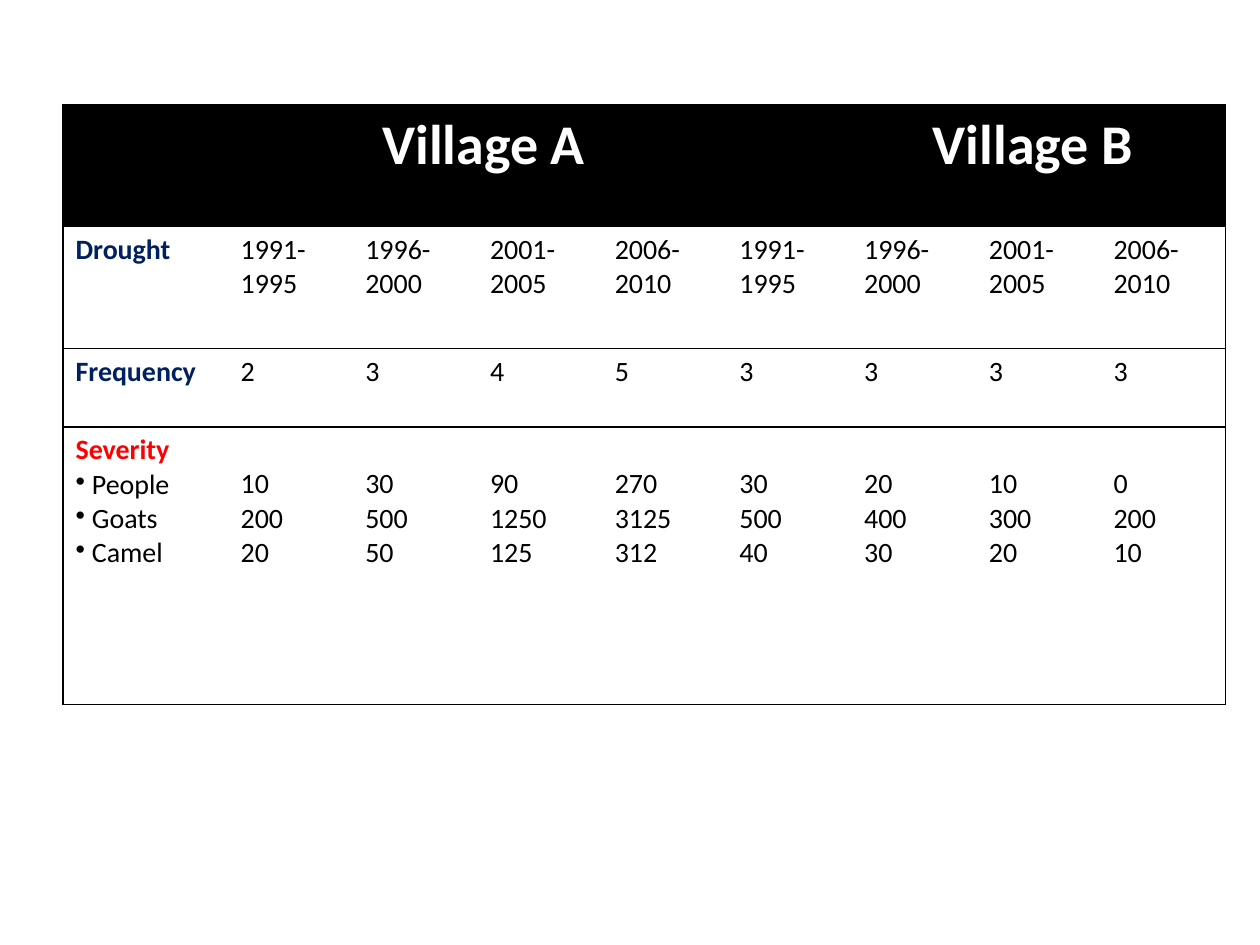
from dataclasses import dataclass
from lxml.etree import SubElement
from pptx import Presentation
from pptx.dml.color import RGBColor
from pptx.enum.text import PP_ALIGN
from pptx.oxml.ns import qn
from pptx.util import Inches, Pt


@dataclass(frozen=True)
class Theme:
    font: str = "Calibri"
    black: str = "000000"
    white: str = "FFFFFF"
    navy: str = "002060"
    red: str = "FF0000"
    heading_size: int = 32
    body_size: int = 16
    border_width: float = 0.75


theme = Theme()


def write_line(cell, text, first=True, size=theme.body_size, color=theme.black,
               bold=False, align=PP_ALIGN.LEFT, bullet=False):
    para = cell.text_frame.paragraphs[0] if first else cell.text_frame.add_paragraph()
    para.alignment = align
    if bullet:
        properties = para._p.get_or_add_pPr()
        properties.set("marL", str(Inches(0.13)))
        properties.set("indent", str(-Inches(0.13)))
        SubElement(properties, qn("a:buChar"), char="•")
    span = para.add_run()
    span.text = text
    span.font.name = theme.font
    span.font.size = Pt(size)
    span.font.bold = bold
    span.font.color.rgb = RGBColor.from_string(color)


def set_borders(cell, visible_sides):
    properties = cell._tc.get_or_add_tcPr()
    for side in "LRTB":
        line = SubElement(properties, qn(f"a:ln{side}"), w=str(Pt(theme.border_width)))
        if side in visible_sides:
            fill = SubElement(line, qn("a:solidFill"))
            SubElement(fill, qn("a:srgbClr"), val=theme.black)
        else:
            SubElement(line, qn("a:noFill"))


periods = ["1991-1995", "1996-2000", "2001-2005", "2006-2010"] * 2
frequencies = [2, 3, 4, 5, 3, 3, 3, 3]
severity = {
    "People": [10, 30, 90, 270, 30, 20, 10, 0],
    "Goats": [200, 500, 1250, 3125, 500, 400, 300, 200],
    "Camel": [20, 50, 125, 312, 40, 30, 20, 10],
}
column_widths = [1.31] + [0.99] * 8
row_heights = [0.97, 0.97, 0.62, 2.2]

deck = Presentation()
deck.slide_width = Inches(10)
deck.slide_height = Inches(7.5)
page = deck.slides.add_slide(deck.slide_layouts[6])

table = page.shapes.add_table(
    len(row_heights), len(column_widths), Inches(0.5), Inches(0.83),
    Inches(sum(column_widths)), Inches(sum(row_heights))).table
table.first_row = False
table.horz_banding = False
for column, width in zip(table.columns, column_widths):
    column.width = Inches(width)
for row, height in zip(table.rows, row_heights):
    row.height = Inches(height)

last_column = len(column_widths) - 1
for row_index, row in enumerate(table.rows):
    for column_index, cell in enumerate(row.cells):
        sides = "TB"
        if column_index == 0:
            sides += "L"
        if column_index == last_column:
            sides += "R"
        set_borders(cell, sides)
        if row_index == 0:
            cell.fill.solid()
            cell.fill.fore_color.rgb = RGBColor.from_string(theme.black)
        else:
            cell.fill.background()

for village, start, left_margin in [("Village A", 1, 0.2), ("Village B", 5, 1.0)]:
    heading = table.cell(0, start)
    heading.merge(table.cell(0, start + 3))
    heading.margin_left = Inches(left_margin)
    write_line(heading, village, size=theme.heading_size, color=theme.white,
               bold=True, align=PP_ALIGN.CENTER)

for row_index, (label, color) in enumerate(
        [("Drought", theme.navy), ("Frequency", theme.navy), ("Severity", theme.red)], 1):
    write_line(table.cell(row_index, 0), label, color=color, bold=True)

for row_index, values in enumerate([periods, frequencies], 1):
    for column_index, value in enumerate(values, 1):
        write_line(table.cell(row_index, column_index), str(value))

for line_index, (victim, losses) in enumerate(severity.items()):
    write_line(table.cell(3, 0), victim, first=False, bullet=True)
    for column_index, loss in enumerate(losses, 1):
        cell = table.cell(3, column_index)
        cell.margin_top = Inches(0.32)
        write_line(cell, str(loss), first=line_index == 0)

deck.save("out.pptx")
